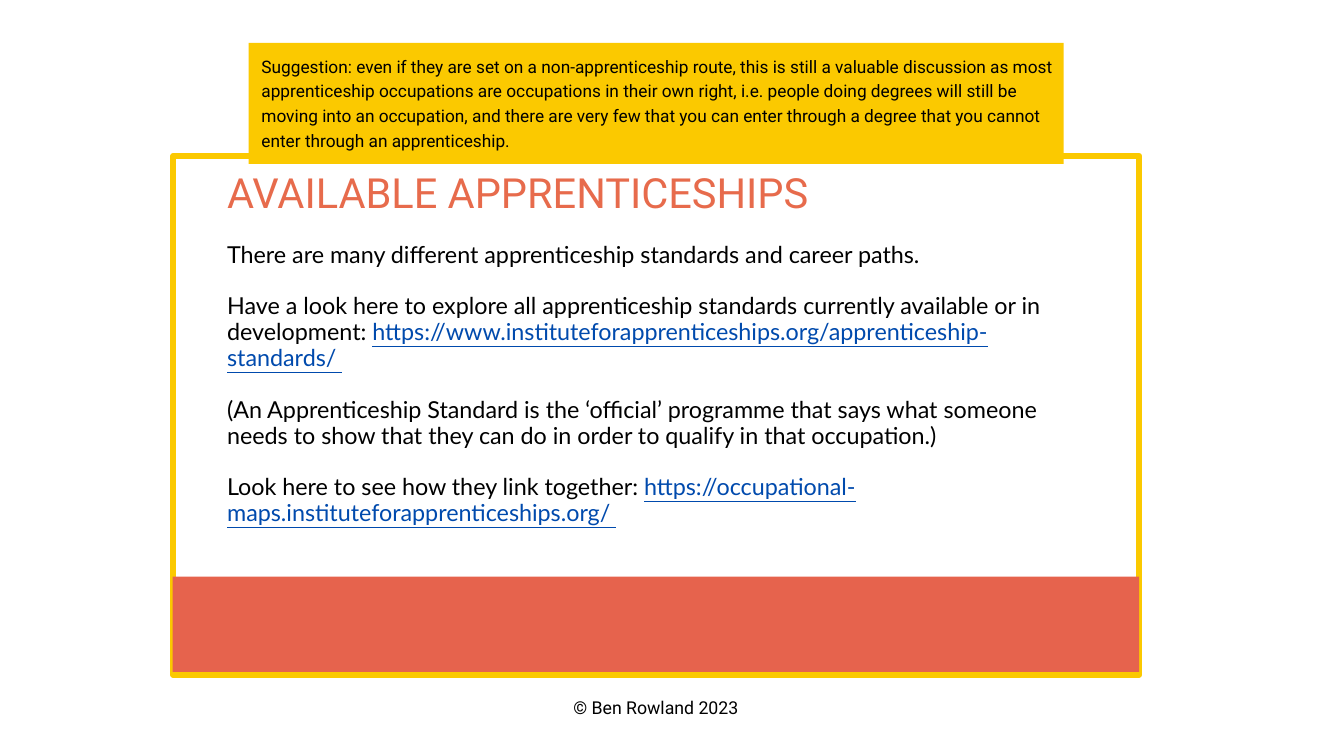
import pptx
import pptx.dml.color
import pptx.enum.shapes
import pptx.enum.text
import pptx.util
from pptx.util import Inches

YELLOW = "FBC900"
CORAL = "E6634D"
TITLE_CORAL = "E76B4C"
BLACK = "000000"
LINK_BLUE = "004AAD"

ALIGN = pptx.enum.text.PP_ALIGN

# Each paragraph is a list of (text, is_link) runs
BODY = [
    [("There are many different apprenticeship standards and career paths.", False)],
    [("Have a look here to explore all apprenticeship standards currently "
      "available or in development: ", False),
     ("https://www.instituteforapprenticeships.org/apprenticeship-standards/ ", True)],
    [("(An Apprenticeship Standard is the ‘official’ programme that says what "
      "someone needs to show that they can do in order to qualify in that "
      "occupation.)", False)],
    [("Look here to see how they link together: ", False),
     ("https://occupational-maps.instituteforapprenticeships.org/ ", True)],
]
SUGGESTION = (
    "Suggestion: even if they are set on a non-apprenticeship route, this is still "
    "a valuable discussion as most apprenticeship occupations are occupations in "
    "their own right, i.e. people doing degrees will still be moving into an "
    "occupation, and there are very few that you can enter through a degree that "
    "you cannot enter through an apprenticeship."
)


def rgb(value):
    return pptx.dml.color.RGBColor.from_string(value)


def add_rect(s, left, top, width, height, fill=None, line=None, line_width=0):
    sp = s.shapes.add_shape(
        pptx.enum.shapes.MSO_SHAPE.RECTANGLE,
        Inches(left), Inches(top), Inches(width), Inches(height))
    sp.shadow.inherit = False
    if fill:
        sp.fill.solid()
        sp.fill.fore_color.rgb = rgb(fill)
    else:
        sp.fill.background()
    if line:
        sp.line.color.rgb = rgb(line)
        sp.line.width = pptx.util.Pt(line_width)
    else:
        sp.line.fill.background()
    return sp


def add_text(s, left, top, width, height, paragraphs, font, size, spacing,
             color=BLACK, align=ALIGN.LEFT, gap=0):
    sp = s.shapes.add_textbox(Inches(left), Inches(top), Inches(width), Inches(height))
    tf = sp.text_frame
    tf.word_wrap = True
    tf.margin_left = tf.margin_top = tf.margin_right = tf.margin_bottom = 0
    for i, runs in enumerate(paragraphs):
        p = tf.add_paragraph() if i else tf.paragraphs[0]
        p.alignment = align
        p.line_spacing = pptx.util.Pt(spacing)
        if i:
            p.space_before = pptx.util.Pt(gap)
        for text, is_link in runs:
            r = p.add_run()
            r.text = text
            r.font.name = font
            r.font.size = pptx.util.Pt(size)
            r.font.color.rgb = rgb(LINK_BLUE if is_link else color)
            if is_link:
                r.font.underline = True
    return sp


def main():
    prs = pptx.Presentation()
    prs.slide_width = Inches(20)
    prs.slide_height = Inches(11.25)
    s = prs.slides.add_slide(prs.slide_layouts[6])

    # Framed panel with title and body
    add_rect(s, 2.58, 2.32, 14.37, 7.72, line=YELLOW, line_width=6.75)
    add_text(s, 3.38, 2.55, 9.25, 0.69, [[("AVAILABLE APPRENTICESHIPS", False)]],
             "Roboto", 44.5, 48.9, color=TITLE_CORAL, align=ALIGN.JUSTIFY)
    add_text(s, 3.38, 3.6, 12.76, 4.71, BODY, "Lato", 25, 27.7, gap=27.7)

    # Coral band and copyright line
    add_rect(s, 2.57, 8.58, 14.38, 1.42, fill=CORAL)
    add_text(s, 8.51, 10.32, 2.5, 0.35, [[("© Ben Rowland 2023", False)]],
             "Roboto", 19, 26.6, align=ALIGN.CENTER)

    # Suggestion note over the top edge of the panel
    add_rect(s, 3.7, 0.64, 12.13, 1.8, fill=YELLOW)
    add_text(s, 3.89, 0.77, 11.79, 1.48, [[(SUGGESTION, False)]],
             "Roboto", 18.5, 26.6)

    prs.save("out.pptx")


if __name__ == "__main__":
    main()
